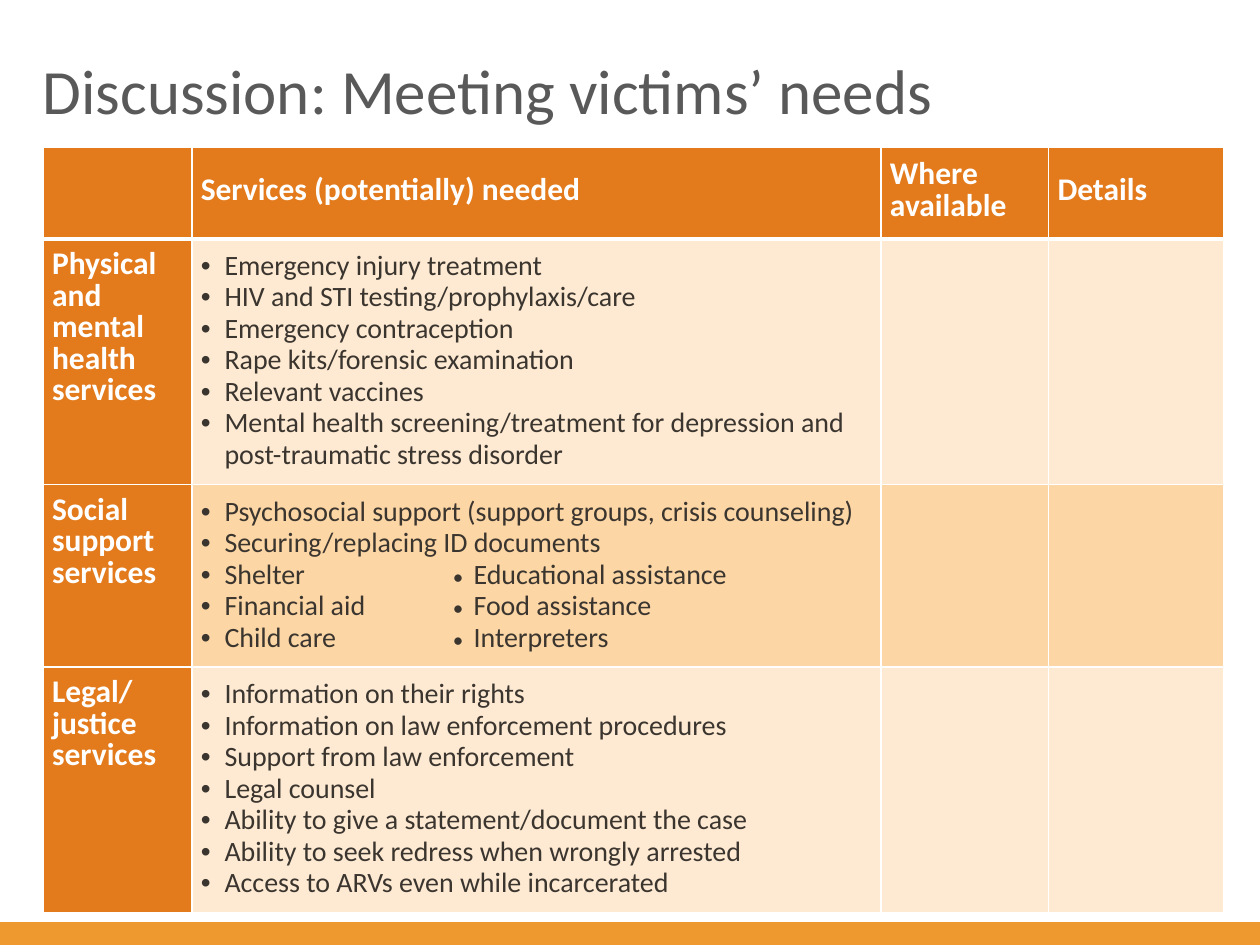
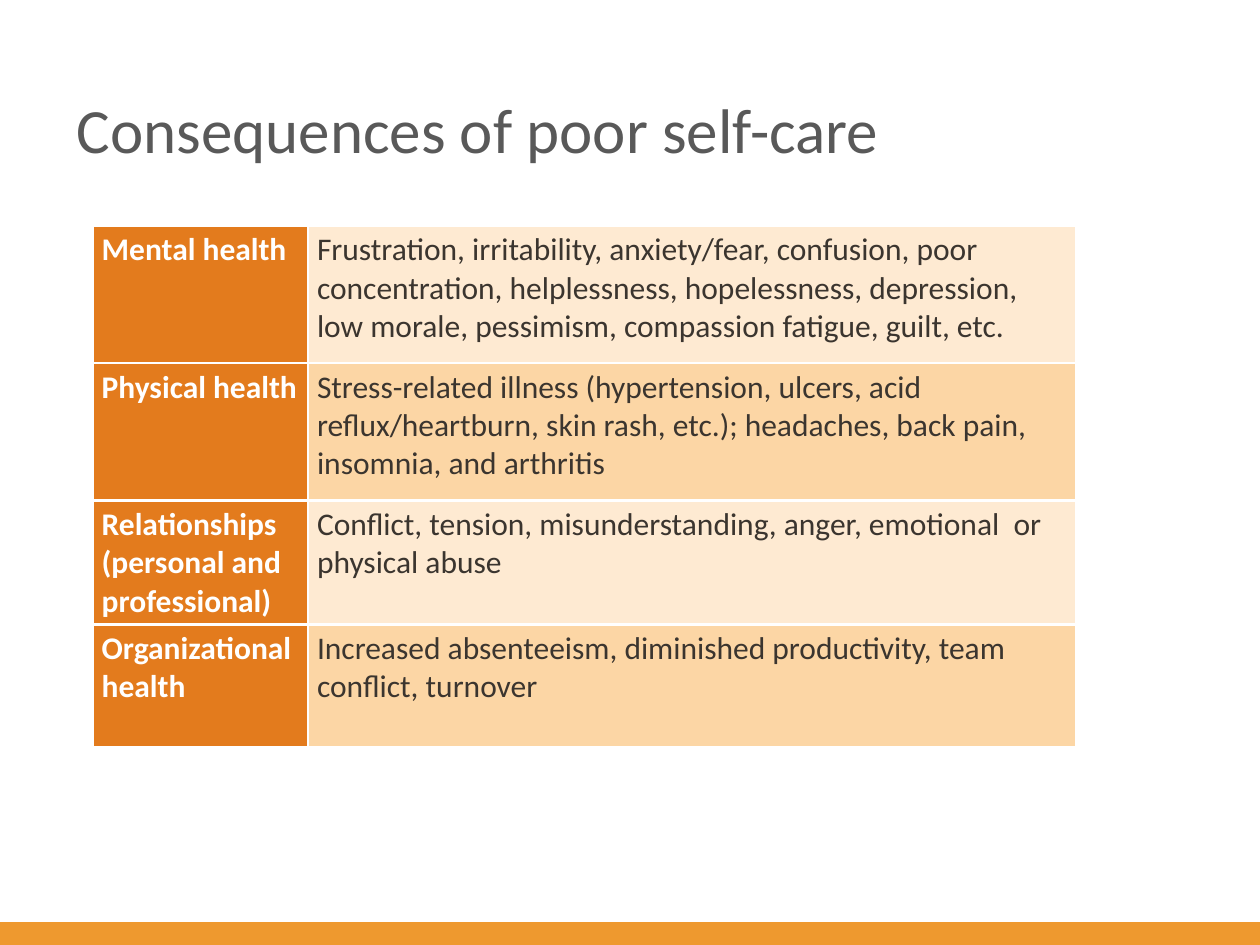
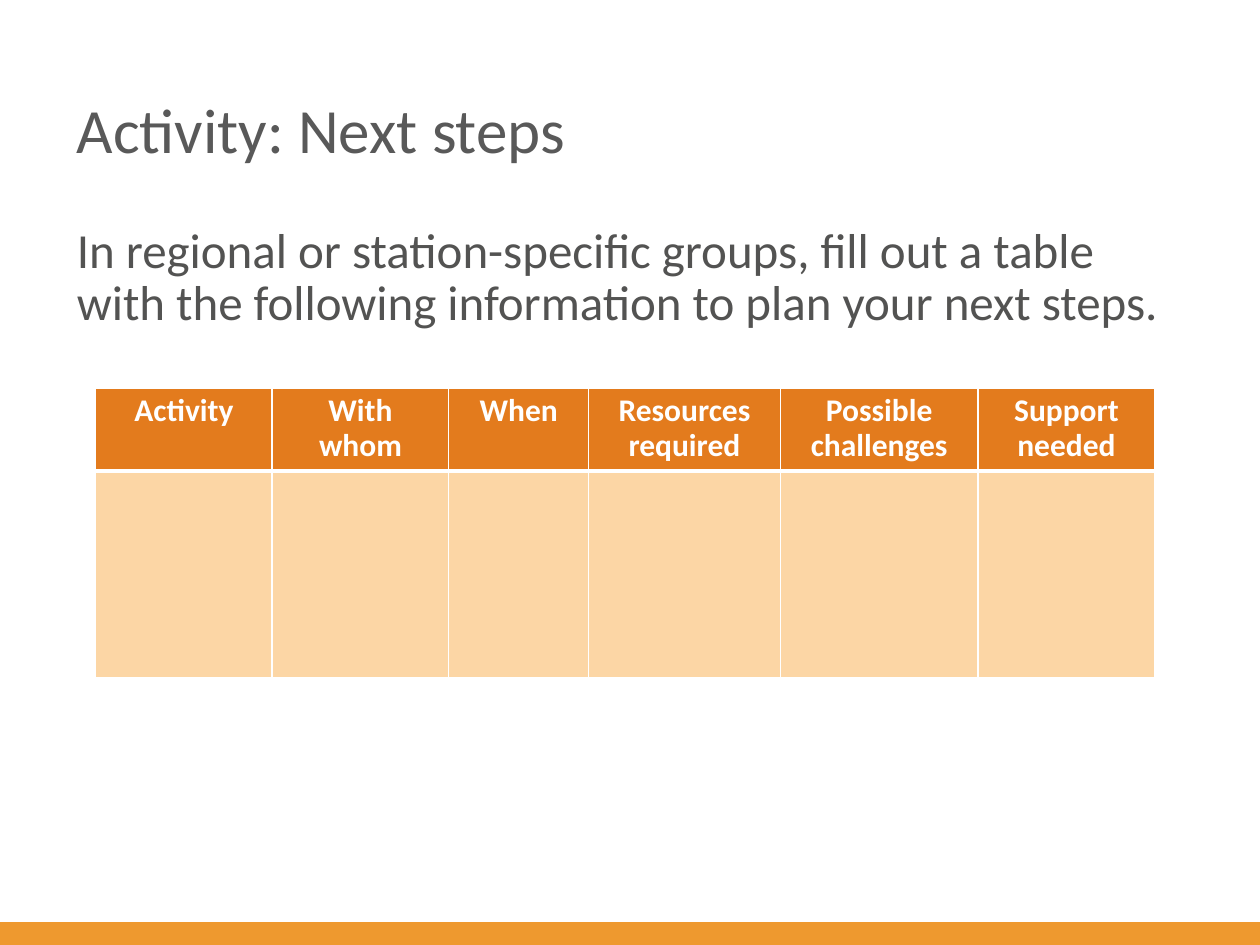
from dataclasses import dataclass
from typing import NamedTuple

from lxml import etree
from pptx import Presentation
from pptx.dml.color import RGBColor
from pptx.enum import shapes, text
from pptx.oxml import ns
from pptx.util import Cm, Pt


@dataclass(frozen=True)
class Theme:
    font: str = "Calibri"
    band: str = "EE992F"
    header: str = "E37B1D"
    light: str = "FEEAD2"
    medium: str = "FCD6A5"
    white: str = "FFFFFF"
    title: str = "595959"
    body: str = "535352"
    ink: str = "3B352F"
    title_size: int = 36
    body_size: int = 28
    label_size: int = 18
    list_size: int = 16
    dot_size: int = 12
    rule: float = 1
    row_rule: float = 1.5
    header_rule: float = 3


THEME = Theme()


class Box(NamedTuple):
    left: float
    top: float
    width: float
    height: float

    def lengths(self):
        return [Cm(value) for value in self]


SLIDE = Box(0, 0, 25.4, 19.05)
TITLE = Box(1.3, 1.24, 22.83, 2.69)


def add_run(paragraph, words, size, color, bold=False):
    run = paragraph.add_run()
    run.text = words
    font = run.font
    font.name = THEME.font
    font.size = Pt(size)
    font.bold = bold
    font.color.rgb = RGBColor.from_string(color)


def paragraphs_for(frame, lines):
    for index, line in enumerate(lines):
        yield (frame.add_paragraph() if index else frame.paragraphs[0]), line


def add_text(slide, box, words, size, color, anchor, spacing=None):
    frame = slide.shapes.add_textbox(*box.lengths()).text_frame
    frame.word_wrap = True
    frame.vertical_anchor = anchor
    paragraph = frame.paragraphs[0]
    paragraph.line_spacing = spacing
    add_run(paragraph, words, size, color)


def add_band(slide, box):
    height = 0.46
    band = slide.shapes.add_shape(
        shapes.MSO_SHAPE.RECTANGLE,
        *Box(box.left, box.top + box.height - height, box.width, height).lengths(),
    )
    band.shadow.inherit = False
    band.fill.solid()
    band.fill.fore_color.rgb = RGBColor.from_string(THEME.band)
    band.line.fill.background()


def add_slide(presentation, title, title_box=TITLE):
    slide = presentation.slides.add_slide(presentation.slide_layouts[6])
    add_band(slide, SLIDE)
    add_text(slide, title_box, title, THEME.title_size, THEME.title, text.MSO_ANCHOR.MIDDLE)
    return slide


def set_borders(cell, **widths):
    properties = cell._tc.get_or_add_tcPr()
    for side in "LRTB":
        width = widths.get(side, THEME.rule)
        line = etree.SubElement(properties, ns.qn(f"a:ln{side}"), w=str(Pt(width)))
        fill = etree.SubElement(line, ns.qn("a:solidFill"))
        etree.SubElement(fill, ns.qn("a:srgbClr"), val=THEME.white)


def style_cell(cell, color, margins=None, anchor=text.MSO_ANCHOR.TOP, **borders):
    set_borders(cell, **borders)
    cell.fill.solid()
    cell.fill.fore_color.rgb = RGBColor.from_string(color)
    cell.vertical_anchor = anchor
    if margins:
        side, end = margins
        cell.margin_left = cell.margin_right = Cm(side)
        cell.margin_top = cell.margin_bottom = Cm(end)


def add_table(slide, box, shares, heights):
    table = slide.shapes.add_table(len(heights), len(shares), *box.lengths()).table
    table.first_row = table.horz_banding = False
    for column, share in zip(table.columns, shares):
        column.width = Cm(box.width * share / sum(shares))
    for row, height in zip(table.rows, heights):
        row.height = Cm(height)
    return table


def write_label(cell, words, spacing=None, alignment=None):
    paragraph = cell.text_frame.paragraphs[0]
    paragraph.line_spacing = spacing
    paragraph.alignment = alignment
    add_run(paragraph, words, THEME.label_size, THEME.white, bold=True)


def add_bullet(paragraph, indent, tabs):
    properties = paragraph._p.get_or_add_pPr()
    properties.set("marL", str(Cm(indent)))
    properties.set("indent", str(-Cm(indent)))
    etree.SubElement(properties, ns.qn("a:buFont"), typeface="Arial")
    etree.SubElement(properties, ns.qn("a:buChar"), char="•")
    if tabs:
        stops = etree.SubElement(properties, ns.qn("a:tabLst"))
        for position in tabs:
            etree.SubElement(stops, ns.qn("a:tab"), pos=str(Cm(position)), algn="l")


def write_bullets(cell, items):
    for paragraph, item in paragraphs_for(cell.text_frame, items):
        paired = isinstance(item, tuple)
        add_bullet(paragraph, 0.48, (5.08, 5.5) if paired else ())
        paragraph.line_spacing = Pt(18)
        first, second = item if paired else (item, None)
        add_run(paragraph, first, THEME.list_size, THEME.ink)
        if second:
            add_run(paragraph, "\t•", THEME.dot_size, THEME.ink)
            add_run(paragraph, f"\t{second}", THEME.list_size, THEME.ink)


def add_services_table(slide, box, headings, services):
    table = add_table(slide, box, (1.18, 5.47, 1.33, 1.39), (1.85, 4.95, 3.68, 4.95))
    for column, heading in enumerate(headings):
        cell = table.cell(0, column)
        style_cell(cell, THEME.header, (0.18, 0.13), text.MSO_ANCHOR.MIDDLE, B=THEME.header_rule)
        if heading:
            write_label(cell, heading, Pt(18))
    for row, (label, items) in enumerate(services, 1):
        shade = THEME.light if row % 2 else THEME.medium
        top = THEME.header_rule if row == 1 else THEME.rule
        for column in range(len(headings)):
            color = shade if column else THEME.header
            style_cell(table.cell(row, column), color, (0.18, 0.25), T=top)
        write_label(table.cell(row, 0), label, Pt(18))
        write_bullets(table.cell(row, 1), items)


def add_consequences_table(slide, box, consequences):
    table = add_table(slide, box, (1.71, 6.1), (2.77, 2.77, 2.5, 2.47))
    borders = dict.fromkeys("LRTB", THEME.row_rule)
    for row, (label, lines) in enumerate(consequences):
        shade = THEME.medium if row % 2 else THEME.light
        for column, color in enumerate((THEME.header, shade)):
            style_cell(table.cell(row, column), color, (0.18, 0.1), **borders)
        write_label(table.cell(row, 0), label)
        for paragraph, line in paragraphs_for(table.cell(row, 1).text_frame, lines):
            add_run(paragraph, line, THEME.label_size, THEME.ink)


def add_planning_table(slide, box, headings):
    table = add_table(slide, box, (1.4, 1.4, 1.11, 1.52, 1.57, 1.4), (1.66, 4.16))
    for column, heading in enumerate(headings):
        cell = table.cell(0, column)
        style_cell(cell, THEME.header, B=THEME.header_rule)
        write_label(cell, heading, Pt(20), text.PP_ALIGN.CENTER)
        style_cell(table.cell(1, column), THEME.medium, T=THEME.header_rule)


def build_needs(presentation):
    slide = add_slide(
        presentation, "Discussion: Meeting victims’ needs", Box(0.61, 0.46, 22.83, 2.69)
    )
    services = [
        ("Physical and mental health services", [
            "Emergency injury treatment",
            "HIV and STI testing/prophylaxis/care",
            "Emergency contraception",
            "Rape kits/forensic examination",
            "Relevant vaccines",
            "Mental health screening/treatment for depression and post-traumatic stress disorder",
        ]),
        ("Social support services", [
            "Psychosocial support (support groups, crisis counseling)",
            "Securing/replacing ID documents",
            ("Shelter", "Educational assistance"),
            ("Financial aid", "Food assistance"),
            ("Child care", "Interpreters"),
        ]),
        ("Legal/ justice services", [
            "Information on their rights",
            "Information on law enforcement procedures",
            "Support from law enforcement",
            "Legal counsel",
            "Ability to give a statement/document the case",
            "Ability to seek redress when wrongly arrested",
            "Access to ARVs even while incarcerated",
        ]),
    ]
    headings = ("", "Services (potentially) needed", "Where available", "Details")
    add_services_table(slide, Box(0.87, 2.97, 23.8, 15.43), headings, services)


def build_consequences(presentation):
    slide = add_slide(presentation, "Consequences of poor self-care")
    consequences = [
        ("Mental health", [
            "Frustration, irritability, anxiety/fear, confusion, poor concentration, "
            "helplessness, hopelessness, depression, low morale, pessimism, "
            "compassion fatigue, guilt, etc.",
        ]),
        ("Physical health", [
            "Stress-related illness (hypertension, ulcers, acid",
            "reflux/heartburn, skin rash, etc.); headaches, back pain, insomnia, and arthritis",
        ]),
        ("Relationships (personal and professional)", [
            "Conflict, tension, misunderstanding, anger, emotional  or physical abuse",
        ]),
        ("Organizational health", [
            "Increased absenteeism, diminished productivity, team",
            "conflict, turnover",
        ]),
    ]
    add_consequences_table(slide, Box(1.87, 4.55, 19.83, 10.51), consequences)


def build_next_steps(presentation):
    slide = add_slide(presentation, "Activity: Next steps")
    add_text(
        slide,
        Box(1.3, 4.42, 22.83, 3),
        "In regional or station-specific groups, fill out a table with the following "
        "information to plan your next steps.",
        THEME.body_size,
        THEME.body,
        text.MSO_ANCHOR.TOP,
        Pt(30),
    )
    headings = (
        "Activity", "With whom", "When",
        "Resources required", "Possible challenges", "Support needed",
    )
    add_planning_table(slide, Box(1.93, 7.83, 21.35, 5.82), headings)


def main():
    presentation = Presentation()
    presentation.slide_width = Cm(SLIDE.width)
    presentation.slide_height = Cm(SLIDE.height)
    build_needs(presentation)
    build_consequences(presentation)
    build_next_steps(presentation)
    presentation.save("out.pptx")


if __name__ == "__main__":
    main()
